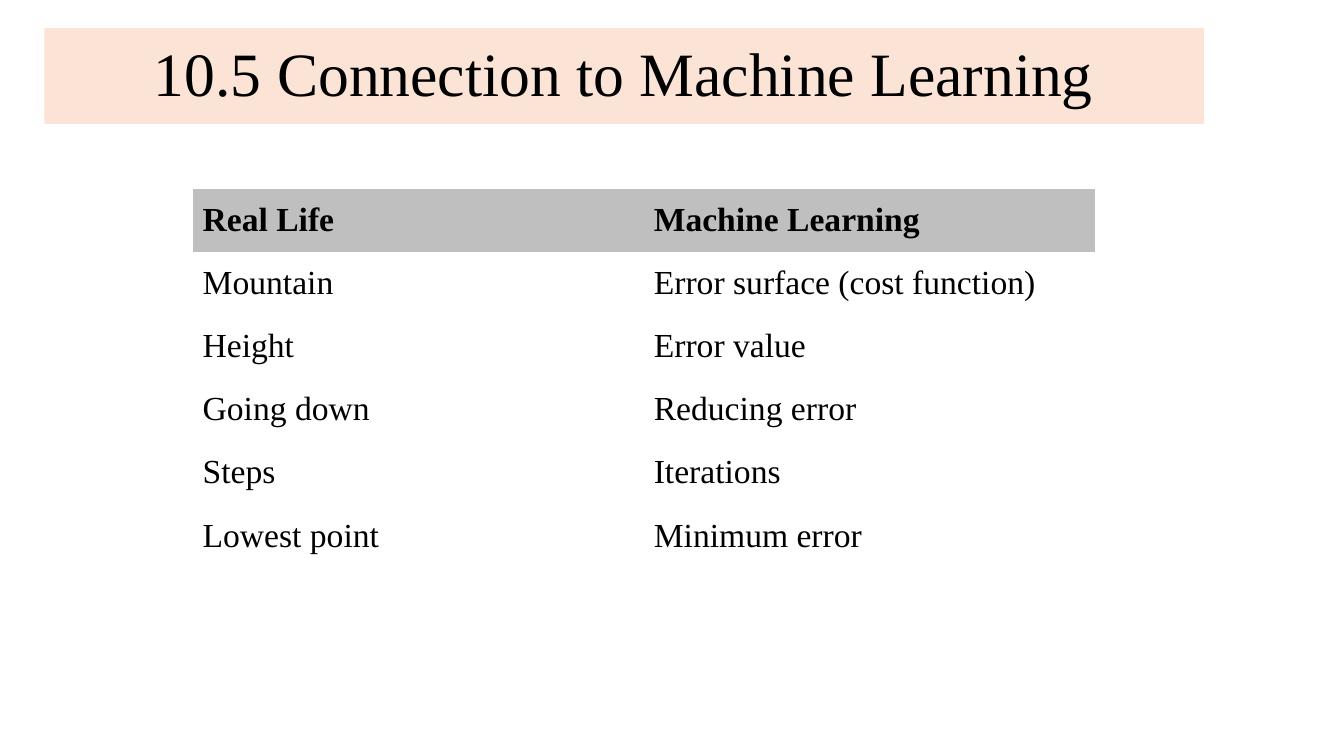
from dataclasses import dataclass

from pptx import Presentation
from pptx.dml.color import RGBColor
from pptx.enum.text import MSO_ANCHOR, MSO_AUTO_SIZE, PP_ALIGN
from pptx.oxml.ns import qn
from pptx.util import Inches, Pt

MIDDLE = MSO_ANCHOR.MIDDLE
CENTER, LEFT = PP_ALIGN.CENTER, PP_ALIGN.LEFT
NO_FIT = MSO_AUTO_SIZE.NONE
TITLE_ONLY = 5
PLAIN_STYLE = "{2D5ABB26-0587-4C30-8999-92F81FD0307C}"

TITLE = "10.5 Connection to Machine Learning"
ROWS = [
    ("Real Life", "Machine Learning"),
    ("Mountain", "Error surface (cost function)"),
    ("Height", "Error value"),
    ("Going down", "Reducing error"),
    ("Steps", "Iterations"),
    ("Lowest point", "Minimum error"),
]

SIZE = (13.33, 7.5)
TITLE_BOX = (0.44, 0.28, 11.5, 0.95)
TABLE_BOX = (1.91, 1.87, 8.95, 3.76)


@dataclass(frozen=True)
class Theme:
    face: str = "Times New Roman"
    ink: RGBColor = RGBColor(0x00, 0x00, 0x00)
    band: RGBColor = RGBColor(0xFB, 0xE3, 0xD6)
    head: RGBColor = RGBColor(0xBF, 0xBF, 0xBF)
    title: int = 44
    body: int = 24


THEME = Theme()


def style(para, size, align, bold=False):
    para.alignment = align
    font = para.font
    font.name, font.size, font.bold = THEME.face, Pt(size), bold
    font.color.rgb = THEME.ink


def paint(fill, color):
    fill.solid()
    fill.fore_color.rgb = color


def add_title(slide):
    title = slide.shapes.title
    title.left, title.top, title.width, title.height = map(Inches, TITLE_BOX)
    paint(title.fill, THEME.band)
    frame = title.text_frame
    frame.text = TITLE
    frame.word_wrap = True
    frame.auto_size = NO_FIT
    frame.vertical_anchor = MIDDLE
    para = frame.paragraphs[0]
    para.line_spacing = 0.9
    style(para, THEME.title, CENTER)


def add_pairs(slide):
    """Add the table that pairs everyday words with technical terms."""
    count = len(ROWS)
    frame = slide.shapes.add_table(count, len(ROWS[0]), *map(Inches, TABLE_BOX))
    table = frame.table
    for tag in frame.element.iter(qn("a:tableStyleId")):
        tag.text = PLAIN_STYLE
    table.horz_banding = False
    for row in table.rows:
        row.height = Inches(TABLE_BOX[3] / count)
    for r, words in enumerate(ROWS):
        for c, word in enumerate(words):
            cell = table.cell(r, c)
            cell.text = word
            cell.vertical_anchor = MIDDLE
            style(cell.text_frame.paragraphs[0], THEME.body, LEFT, r == 0)
            if r == 0:
                paint(cell.fill, THEME.head)
            else:
                cell.fill.background()


def main():
    deck = Presentation()
    deck.slide_width, deck.slide_height = map(Inches, SIZE)
    slide = deck.slides.add_slide(deck.slide_layouts[TITLE_ONLY])
    add_title(slide)
    add_pairs(slide)
    deck.save("out.pptx")


if __name__ == "__main__":
    main()
